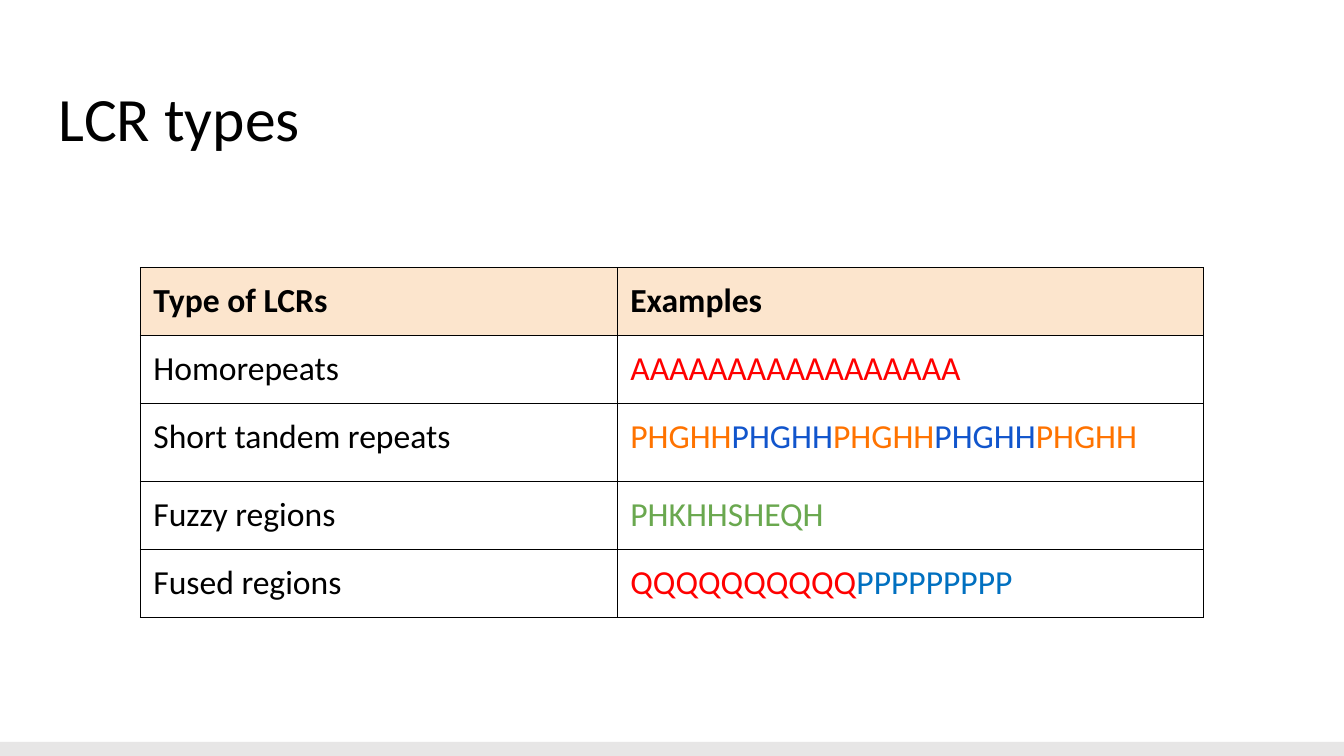
from lxml import etree
from pptx import Presentation
from pptx.dml.color import RGBColor
from pptx.enum.shapes import MSO_SHAPE
from pptx.enum.text import MSO_ANCHOR
from pptx.oxml.ns import qn
from pptx.util import Pt

RECT = MSO_SHAPE.RECTANGLE
TOP, BOTTOM = MSO_ANCHOR.TOP, MSO_ANCHOR.BOTTOM

BLACK = RGBColor(0x00, 0x00, 0x00)
GREY = RGBColor(0xE7, 0xE6, 0xE6)
PEACH = RGBColor(0xFC, 0xE5, 0xCD)
RED = RGBColor(0xFF, 0x00, 0x00)
ORANGE = RGBColor(0xFF, 0x73, 0x00)
NAVY = RGBColor(0x11, 0x55, 0xCC)
GREEN = RGBColor(0x6A, 0xA8, 0x4F)
BLUE = RGBColor(0x00, 0x70, 0xC0)

WIDTH, HEIGHT = 960, 540
INSET = Pt(9.36)
MARGINS = {f"margin_{side}": INSET for side in ("left", "right", "top", "bottom")}
TITLE = {"name": "Calibri", "size": Pt(44), "bold": False}
BODY = {"name": "Calibri", "size": Pt(24), "bold": False}
HEAD = {**BODY, "bold": True}

COLS = [340.7, 419]
ROWS = [48.5, 48.5, 55.7, 48.5, 48.5]
UNIT = "PHGHH"
TYPES = [
    ("Homorepeats", [("A" * 17, RED)]),
    ("Short tandem repeats",
     [(UNIT, NAVY if i % 2 else ORANGE) for i in range(5)]),
    ("Fuzzy regions", [("PHKHHSHEQH", GREEN)]),
    ("Fused regions", [("Q" * 10, RED), ("P" * 9, BLUE)]),
]


def apply(target, values):
    for key, value in values.items():
        setattr(target, key, value)


def write(frame, runs, style):
    para = frame.paragraphs[0]
    for text, color in runs:
        run = para.add_run()
        run.text = text
        apply(run.font, style)
        run.font.color.rgb = color
    return para


def add_bar(slide, left, top, width, height, color):
    bar = slide.shapes.add_shape(RECT, Pt(left), Pt(top), Pt(width), Pt(height))
    bar.shadow.inherit = False
    bar.fill.solid()
    bar.fill.fore_color.rgb = color
    bar.line.fill.background()


def add_title(slide, text, left, top, width, height):
    box = slide.shapes.add_textbox(Pt(left), Pt(top), Pt(width), Pt(height))
    frame = box.text_frame
    apply(frame, {**MARGINS, "word_wrap": True, "vertical_anchor": BOTTOM})
    write(frame, [(text, BLACK)], TITLE).line_spacing = 0.9


def add_border(cell):
    props = cell._tc.get_or_add_tcPr()
    # Borders must come before the fill
    for i, side in enumerate(("lnL", "lnR", "lnT", "lnB")):
        line = etree.Element(qn(f"a:{side}"), w=str(Pt(0.75)))
        fill = etree.SubElement(line, qn("a:solidFill"))
        etree.SubElement(fill, qn("a:srgbClr"), val=str(BLACK))
        props.insert(i, line)


def fill_cell(cell, runs, style, color=None):
    apply(cell, {**MARGINS, "vertical_anchor": TOP})
    write(cell.text_frame, runs, style)
    if color is None:
        cell.fill.background()
    else:
        cell.fill.solid()
        cell.fill.fore_color.rgb = color
    add_border(cell)


def add_grid(slide, left, top):
    table = slide.shapes.add_table(
        len(ROWS), len(COLS), Pt(left), Pt(top), Pt(sum(COLS)), Pt(sum(ROWS))).table
    apply(table, {"first_row": False, "horz_banding": False})
    for col, width in zip(table.columns, COLS):
        col.width = Pt(width)
    for row, height in zip(table.rows, ROWS):
        row.height = Pt(height)

    # Header
    for i, text in enumerate(("Type of LCRs", "Examples")):
        fill_cell(table.cell(0, i), [(text, BLACK)], HEAD, PEACH)

    # Types with their sample sequences
    for i, (label, runs) in enumerate(TYPES, 1):
        fill_cell(table.cell(i, 0), [(label, BLACK)], BODY)
        fill_cell(table.cell(i, 1), runs, BODY)


def main():
    deck = Presentation()
    apply(deck, {"slide_width": Pt(WIDTH), "slide_height": Pt(HEIGHT)})
    slide = deck.slides.add_slide(deck.slide_layouts[6])

    # Footer bar, title and table
    add_bar(slide, 0, 530, WIDTH, 10, GREY)
    add_title(slide, "LCR types", 32.7, 33, 894.5, 87.3)
    add_grid(slide, 100.2, 191.2)
    deck.save("out.pptx")


if __name__ == "__main__":
    main()
